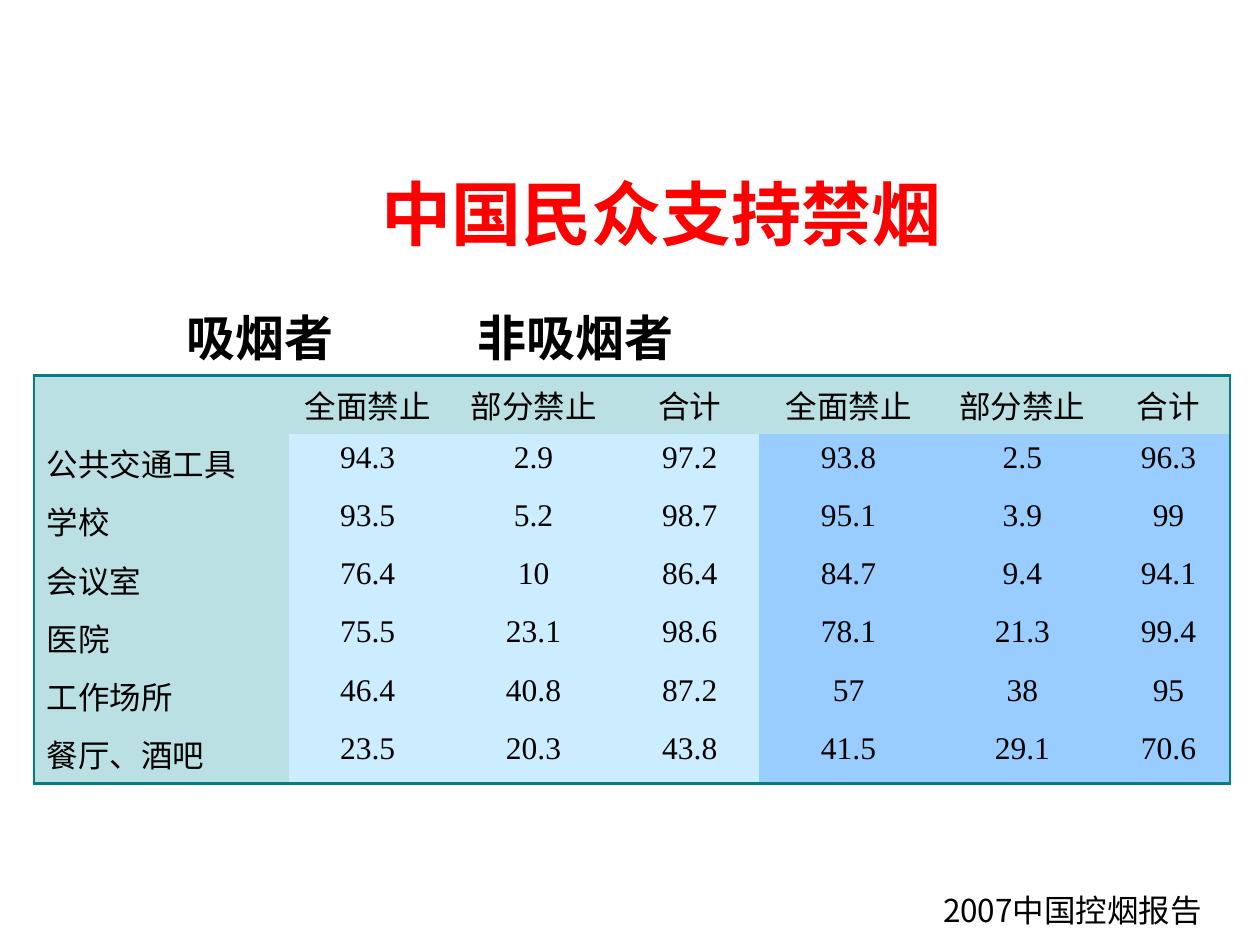
from dataclasses import dataclass, field

from lxml.etree import SubElement
from pptx import Presentation
from pptx.dml.color import RGBColor
from pptx.enum.text import MSO_ANCHOR as Anchor, MSO_AUTO_SIZE as AutoSize, PP_ALIGN as Align
from pptx.oxml.ns import qn
from pptx.util import Cm, Pt

SANS = "Noto Sans CJK SC"
SERIF = "Times New Roman"
BLACK = "000000"
RED = "FF0000"
TEAL = "008080"
LABEL_FILL = "BBE0E3"
SMOKER_FILL = "CCECFF"
NONSMOKER_FILL = "99CCFF"

HEADINGS = ["全面禁止", "部分禁止", "合计"]
ROWS = [
    ["", *HEADINGS, *HEADINGS],
    ["公共交通工具", "94.3", "2.9", "97.2", "93.8", "2.5", "96.3"],
    ["学校", "93.5", "5.2", "98.7", "95.1", "3.9", "99"],
    ["会议室", "76.4", "10", "86.4", "84.7", "9.4", "94.1"],
    ["医院", "75.5", "23.1", "98.6", "78.1", "21.3", "99.4"],
    ["工作场所", "46.4", "40.8", "87.2", "57", "38", "95"],
    ["餐厅、酒吧", "23.5", "20.3", "43.8", "41.5", "29.1", "70.6"],
]
COLUMN_WIDTHS = [5.13, 3.18, 3.51, 2.79, 3.61, 3.4, 2.49]
ROW_HEIGHTS = [1.14, 1.02, 1.02, 1.09, 1.09, 1.02, 1.02]


@dataclass
class Label:
    text: str
    left: float
    top: float
    width: float
    height: float
    size: int
    color: str = BLACK
    bold: bool = False
    align: Align = Align.LEFT
    tabs: list[float] = field(default_factory=list)
    frame: dict = field(default_factory=dict)


GROWING = {"auto_size": AutoSize.SHAPE_TO_FIT_TEXT, "margin_top": Cm(0.03)}
LABELS = [
    Label("中国民众支持禁烟", 2.54, 3.43, 21.59, 1.7, 40, RED, True, Align.CENTER,
          frame={"vertical_anchor": Anchor.MIDDLE}),
    Label("吸烟者\t非吸烟者", 3.51, 6.17, 20.8, 1.19, 28, bold=True,
          tabs=[5.87], frame=GROWING),
    Label("2007中国控烟报告", 17.09, 17.93, 7.39, 0.86, 18, align=Align.RIGHT, frame=GROWING),
]


def rgb(value: str) -> RGBColor:
    return RGBColor.from_string(value)


def apply(target, values: dict) -> None:
    for name, value in values.items():
        setattr(target, name, value)


def add_span(para, text: str, font: str, size: int, color: str, bold: bool = False) -> None:
    span = para.add_run()
    span.text = text
    apply(span.font, {"name": font, "size": Pt(size), "bold": bold})
    span.font.color.rgb = rgb(color)
    SubElement(span.font._element, qn("a:ea"), typeface=font)


def add_label(page, label: Label) -> None:
    box = page.shapes.add_textbox(
        Cm(label.left), Cm(label.top), Cm(label.width), Cm(label.height)
    )
    apply(box.text_frame, {"word_wrap": True} | label.frame)
    para = box.text_frame.paragraphs[0]
    para.alignment = label.align
    if label.tabs:
        stops = SubElement(para._p.get_or_add_pPr(), qn("a:tabLst"))
        for stop in label.tabs:
            SubElement(stops, qn("a:tab"), pos=str(Cm(stop)), algn="l")
    add_span(para, label.text, SANS, label.size, label.color, label.bold)


def set_borders(cell, widths: dict[str, int]) -> None:
    properties = cell._tc.get_or_add_tcPr()
    for side, width in widths.items():
        line = SubElement(properties, qn(f"a:ln{side}"), w=str(Pt(width)))
        if width:
            fill = SubElement(line, qn("a:solidFill"))
            SubElement(fill, qn("a:srgbClr"), val=TEAL)
        else:
            SubElement(line, qn("a:noFill"))


def cell_fill(row: int, column: int) -> str:
    if row == 0 or column == 0:
        return LABEL_FILL
    return SMOKER_FILL if column <= len(HEADINGS) else NONSMOKER_FILL


def fill_cell(cell, row: int, column: int, text: str) -> None:
    last_row, last_column = len(ROWS) - 1, len(COLUMN_WIDTHS) - 1
    set_borders(cell, {
        "L": 1 if column == 0 else 0,
        "R": 1 if column == last_column else 0,
        "T": 2 if row == 0 else 0,
        "B": 2 if row == last_row else 0,
    })
    cell.fill.solid()
    cell.fill.fore_color.rgb = rgb(cell_fill(row, column))
    para = cell.text_frame.paragraphs[0]
    para.alignment = Align.CENTER if column else Align.LEFT
    apply_indent = {"marL": Cm(0.95), "indent": -Cm(0.95)}
    for name, value in apply_indent.items():
        para._p.get_or_add_pPr().set(name, str(value))
    if text:
        add_span(para, text, SERIF if row and column else SANS, 18, BLACK)


def add_support_table(page) -> None:
    table = page.shapes.add_table(
        len(ROWS), len(COLUMN_WIDTHS), Cm(0.69), Cm(7.57),
        Cm(sum(COLUMN_WIDTHS)), Cm(sum(ROW_HEIGHTS)),
    ).table
    apply(table, {"first_row": False, "horz_banding": False})
    for column, width in zip(table.columns, COLUMN_WIDTHS):
        column.width = Cm(width)
    for row, height in zip(table.rows, ROW_HEIGHTS):
        row.height = Cm(height)
    for row, texts in enumerate(ROWS):
        for column, text in enumerate(texts):
            fill_cell(table.cell(row, column), row, column, text)


def main() -> None:
    deck = Presentation()
    apply(deck, {"slide_width": Cm(25.4), "slide_height": Cm(19.05)})
    page = deck.slides.add_slide(deck.slide_layouts[6])
    add_support_table(page)
    for label in LABELS:
        add_label(page, label)
    deck.save("out.pptx")


if __name__ == "__main__":
    main()
